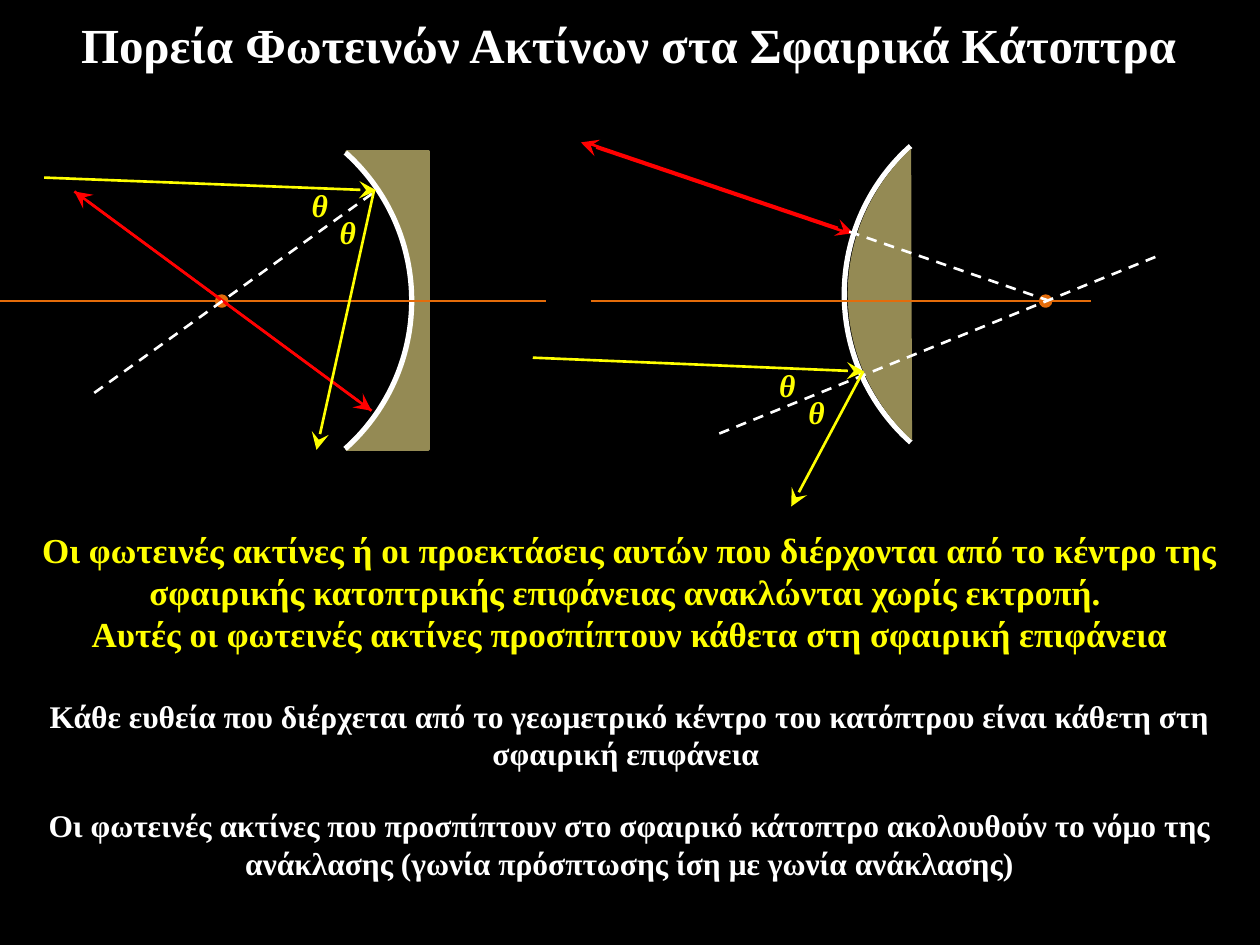
from typing import NamedTuple

import pptx
import pptx.dml.color
import pptx.enum.dml
import pptx.enum.shapes
import pptx.enum.text
import pptx.oxml
import pptx.oxml.ns
import pptx.util

Cm, Pt = pptx.util.Cm, pptx.util.Pt
RGBColor = pptx.dml.color.RGBColor
Kind = pptx.enum.shapes.MSO_SHAPE
Anchor = pptx.enum.text.MSO_ANCHOR
AutoSize = pptx.enum.text.MSO_AUTO_SIZE

BLACK = RGBColor(0x00, 0x00, 0x00)
WHITE = RGBColor(0xFF, 0xFF, 0xFF)
YELLOW = RGBColor(0xFF, 0xFF, 0x00)
RED = RGBColor(0xFF, 0x00, 0x00)
ORANGE = RGBColor(0xE4, 0x6C, 0x0A)
OLIVE = RGBColor(0x94, 0x8A, 0x54)

AXIS_Y = 6.07
MIRROR = 8.0  # diameter of the mirror sphere
DOT = 0.2


class Part(NamedTuple):
    """A filled shape; lengths in cm, angles in degrees."""
    kind: Kind
    left: float
    top: float
    width: float
    height: float
    fill: RGBColor
    line: RGBColor | None = None
    weight: float = 2
    angles: tuple[float, ...] = ()


class Ray(NamedTuple):
    """A straight line between two points in cm."""
    start: tuple[float, float]
    end: tuple[float, float]
    colour: RGBColor
    arrow: bool = False
    dashed: bool = False


class Label(NamedTuple):
    """A text box in cm, one paragraph per string."""
    left: float
    top: float
    width: float
    height: float
    paras: tuple[str, ...]
    size: float
    colour: RGBColor
    italic: bool = False
    wrap: bool = True
    anchor: Anchor = Anchor.TOP
    fit: AutoSize = AutoSize.SHAPE_TO_FIT_TEXT


def add_part(page, part: Part) -> None:
    shape = page.shapes.add_shape(
        part.kind, Cm(part.left), Cm(part.top), Cm(part.width), Cm(part.height))
    shape.shadow.inherit = False
    for index, angle in enumerate(part.angles):
        shape.adjustments[index] = angle * 0.6  # 60000 units a degree, scaled by 100000
    shape.fill.solid()
    shape.fill.fore_color.rgb = part.fill
    if part.line is None:
        shape.line.fill.background()
    else:
        shape.line.color.rgb = part.line
        shape.line.width = Pt(part.weight)


def add_ray(page, ray: Ray) -> None:
    points = [Cm(value) for value in ray.start + ray.end]
    connector = page.shapes.add_connector(
        pptx.enum.shapes.MSO_CONNECTOR.STRAIGHT, *points)
    connector.line.color.rgb = ray.colour
    connector.line.width = Pt(1.5)
    if ray.dashed:
        connector.line.dash_style = pptx.enum.dml.MSO_LINE.DASH
    if ray.arrow:
        connector.line._get_or_add_ln().append(pptx.oxml.parse_xml(
            f'<a:tailEnd {pptx.oxml.ns.nsdecls("a")} type="stealth" w="lg" len="lg"/>'))
    connector._element.spPr.append(pptx.oxml.parse_xml(
        f'<a:effectLst {pptx.oxml.ns.nsdecls("a")}/>'))


def add_label(page, label: Label) -> None:
    box = page.shapes.add_textbox(
        Cm(label.left), Cm(label.top), Cm(label.width), Cm(label.height))
    frame = box.text_frame
    frame_format = {"word_wrap": label.wrap, "auto_size": label.fit,
                    "vertical_anchor": label.anchor}
    for name, value in frame_format.items():
        setattr(frame, name, value)
    font_format = {"name": "Times New Roman", "size": Pt(label.size),
                   "bold": True, "italic": label.italic}
    for index, text in enumerate(label.paras):
        para = frame.add_paragraph() if index else frame.paragraphs[0]
        para.alignment = pptx.enum.text.PP_ALIGN.CENTER
        span = para.add_run()
        span.text = text
        for name, value in font_format.items():
            setattr(span.font, name, value)
        span.font.color.rgb = label.colour


def statement(top: float, height: float, size: float, colour: RGBColor,
              *paras: str) -> Label:
    return Label(0.3, top, 24.79, height, paras, size, colour)


def theta(left: float, top: float) -> Label:
    return Label(left, top, 0.86, 1.02, ("θ",), 18, YELLOW, italic=True, wrap=False)


def centre_dot(x: float) -> Part:
    return Part(Kind.OVAL, x - DOT / 2, AXIS_Y - DOT / 2, DOT, DOT, ORANGE, ORANGE)


ITEMS = [
    Label(-0.03, 0.05, 25.4, 1.68, ("Πορεία Φωτεινών Ακτίνων στα Σφαιρικά Κάτοπτρα",),
          28, WHITE, anchor=Anchor.MIDDLE, fit=AutoSize.NONE),
    # Concave and convex mirrors
    Part(Kind.RECTANGLE, 6.99, 3.07, 1.65, 5.99, OLIVE, OLIVE),
    Part(Kind.ARC, 0.3, 2.06, MIRROR, MIRROR, BLACK, WHITE, 3, (311.76, 48.36)),
    Part(Kind.ARC, 17.02, 1.93, MIRROR, MIRROR, BLACK, WHITE, 3, (131.64, 228.24)),
    Part(Kind.CHORD, 17.09, 1.93, MIRROR, MIRROR, OLIVE, angles=(132.51, 227.14)),
    # Centres and optical axes
    centre_dot(4.47),
    centre_dot(21.08),
    Ray((0, AXIS_Y), (11, AXIS_Y), ORANGE),
    Ray((11.91, AXIS_Y), (22, AXIS_Y), ORANGE),
    # Rays through the centre, reflected and incident
    Ray((7.49, 8.28), (1.5, 3.86), RED, arrow=True),
    Ray((17.02, 4.67), (11.71, 2.87), RED, arrow=True),
    statement(
        10.52, 2.82, 20, YELLOW,
        "Οι φωτεινές ακτίνες ή οι προεκτάσεις αυτών που διέρχονται από το κέντρο της "
        "σφαιρικής κατοπτρικής επιφάνειας ανακλώνται χωρίς εκτροπή. ",
        "Αυτές οι φωτεινές ακτίνες προσπίπτουν κάθετα στη σφαιρική επιφάνεια"),
    Ray((1.5, 3.86), (7.49, 8.28), RED, arrow=True),
    Ray((11.89, 2.9), (17.2, 4.7), RED, arrow=True),
    Ray((17.12, 4.67), (21.11, 6.05), WHITE, dashed=True),
    # Normals to the surface
    Ray((1.9, 7.92), (7.59, 3.84), WHITE, dashed=True),
    Ray((14.5, 8.74), (23.29, 5.18), WHITE, dashed=True),
    statement(
        13.92, 1.8, 18, WHITE,
        "Κάθε ευθεία που διέρχεται από το γεωμετρικό κέντρο του κατόπτρου είναι "
        "κάθετη στη σφαιρική επιφάνεια "),
    # Law of reflection
    Ray((0.89, 3.58), (7.59, 3.84), YELLOW, arrow=True),
    Ray((7.54, 3.84), (6.38, 9.07), YELLOW, arrow=True),
    theta(6.02, 3.63),
    theta(6.58, 4.17),
    Ray((10.74, 7.21), (17.42, 7.49), YELLOW, arrow=True),
    Ray((17.4, 7.49), (15.95, 10.21), YELLOW, arrow=True),
    theta(15.44, 7.26),
    theta(16.03, 7.8),
    statement(
        16.13, 1.8, 18, WHITE,
        "Οι φωτεινές ακτίνες που προσπίπτουν στο σφαιρικό κάτοπτρο ακολουθούν το νόμο "
        "της ανάκλασης (γωνία πρόσπτωσης ίση με γωνία ανάκλασης)"),
]

DRAW = {Part: add_part, Ray: add_ray, Label: add_label}


def main() -> None:
    deck = pptx.Presentation()
    deck.slide_width, deck.slide_height = Cm(25.4), Cm(19.05)
    page = deck.slides.add_slide(deck.slide_layouts[6])
    page.background.fill.solid()
    page.background.fill.fore_color.rgb = BLACK
    for item in ITEMS:
        DRAW[type(item)](page, item)
    deck.save("out.pptx")


if __name__ == "__main__":
    main()
